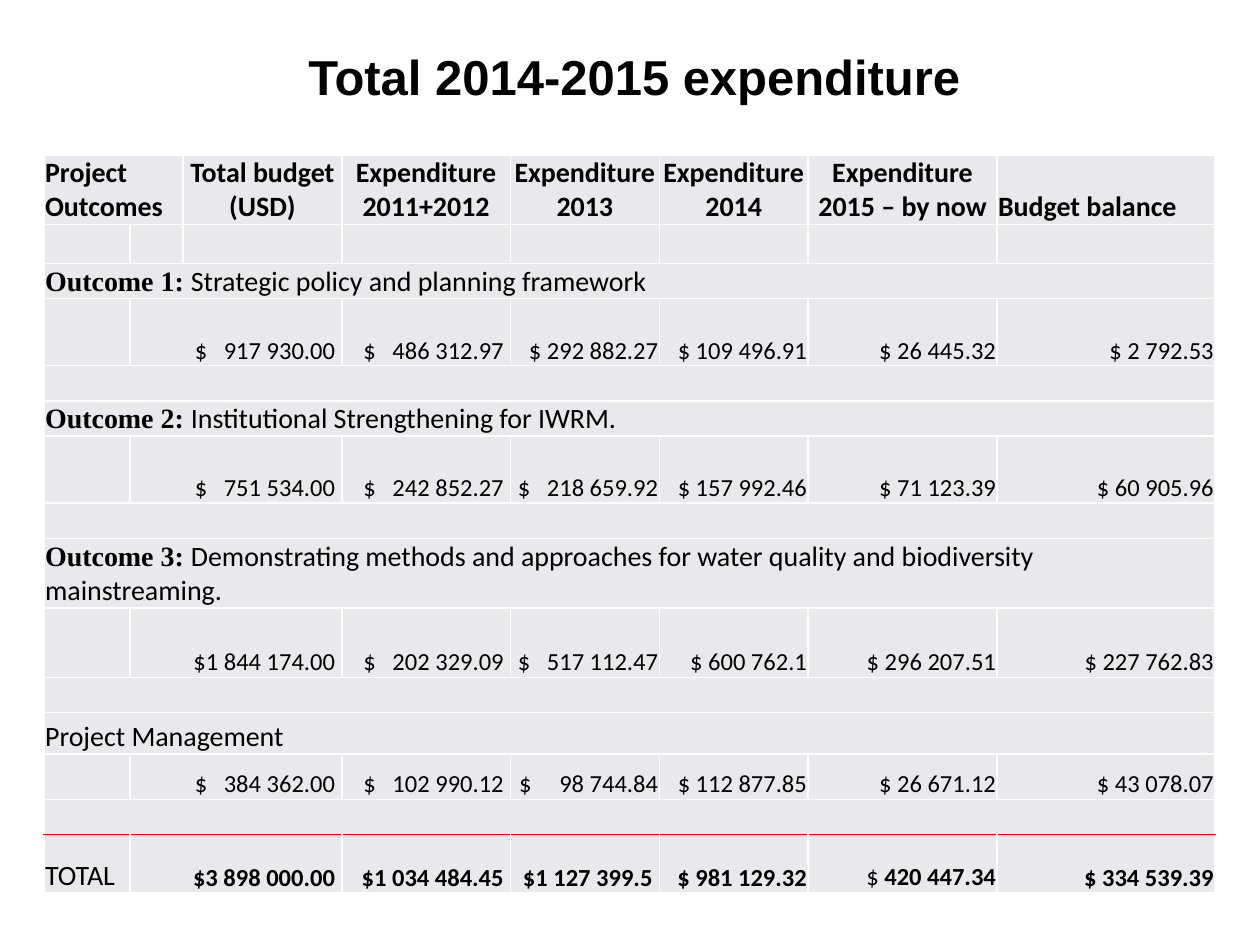
"""Builds a slide with a table of project expenditure by outcome."""
from lxml import etree
from pptx import Presentation
from pptx.dml.color import RGBColor
from pptx.enum.text import MSO_ANCHOR, PP_ALIGN
from pptx.oxml.ns import qn
from pptx.util import Cm, Pt

LEFT, CENTER, RIGHT = PP_ALIGN.LEFT, PP_ALIGN.CENTER, PP_ALIGN.RIGHT
MIDDLE, BOTTOM = MSO_ANCHOR.MIDDLE, MSO_ANCHOR.BOTTOM
BLACK, WHITE, RED, GREY = "000000", "FFFFFF", "FF0000", "E9E9ED"
BODY, SERIF, HEADING = "Calibri", "Times New Roman", "Arial"

COLUMN_WIDTHS = [1.73, 1.07, 3.2, 3.4, 3, 3, 3.81, 4.39]
ROW_HEIGHTS = [1.4, 0.79, 0.71, 1.35, 0.71, 0.71, 1.35, 0.71,
               1.37, 1.4, 0.71, 0.84, 0.91, 0.71, 1.17]
HEADERS = ["Total budget (USD)", "Expenditure 2011+2012", "Expenditure 2013",
           "Expenditure 2014", "Expenditure 2015 – by now", "Budget balance"]
SECTIONS = [
    ("Outcome 1: ", "Strategic policy and planning framework",
     [" $   917 930.00 ", " $   486 312.97 ", "$ 292 882.27",
      "$ 109 496.91", "$ 26 445.32", "$ 2 792.53"]),
    ("Outcome 2: ", "Institutional Strengthening for IWRM.",
     [" $   751 534.00 ", " $   242 852.27 ", " $   218 659.92 ",
      "$ 157 992.46", "$ 71 123.39", "$ 60 905.96"]),
    ("Outcome 3: ", "Demonstrating methods and approaches for water quality "
     "and biodiversity mainstreaming.",
     [" $1 844 174.00 ", " $   202 329.09 ", " $   517 112.47 ",
      "$ 600 762.1", " $ 296 207.51", "$ 227 762.83"]),
    ("", "Project Management",
     [" $   384 362.00 ", " $   102 990.12 ", " $     98 744.84 ",
      "$ 112 877.85", "$ 26 671.12", "$ 43 078.07"]),
]
TOTALS = [" $3 898 000.00 ", " $1 034 484.45 ", " $1 127 399.5 ",
          "$ 981 129.32", "420 447.34", "$ 334 539.39"]


def color(value):
    return RGBColor.from_string(value)


def write(paragraph, alignment, text, size, bold=False, font=BODY):
    paragraph.alignment = alignment
    run = paragraph.add_run()
    run.text = text
    run.font.name = font
    run.font.size = Pt(size)
    run.font.bold = bold
    run.font.color.rgb = color(BLACK)


presentation = Presentation()
presentation.slide_width = Cm(25.4)
presentation.slide_height = Cm(19.05)
slide = presentation.slides.add_slide(presentation.slide_layouts[5])

title = slide.shapes.title
title.left, title.top = Cm(3.07), Cm(0.71)
title.width, title.height = Cm(19.43), Cm(1.63)
title.text_frame.vertical_anchor = MIDDLE
write(title.text_frame.paragraphs[0], CENTER,
      "Total 2014-2015 expenditure", 28, True, HEADING)

last_row = len(ROW_HEIGHTS) - 1
last_column = len(COLUMN_WIDTHS) - 1
table = slide.shapes.add_table(
    len(ROW_HEIGHTS), len(COLUMN_WIDTHS), Cm(0.89), Cm(3.12),
    Cm(sum(COLUMN_WIDTHS)), Cm(sum(ROW_HEIGHTS))).table
table.first_row = False
table.horz_banding = False
for column, width in zip(table.columns, COLUMN_WIDTHS):
    column.width = Cm(width)

for row_index, height in enumerate(ROW_HEIGHTS):
    table.rows[row_index].height = Cm(height)
    for cell in table.rows[row_index].cells:
        cell.margin_left = cell.margin_right = cell.margin_top = Cm(0.02)
        cell.margin_bottom = 0
        cell.vertical_anchor = BOTTOM
        properties = cell._tc.get_or_add_tcPr()
        for side in ("L", "R", "T", "B"):
            on_total_line = (row_index, side) in ((last_row - 1, "B"), (last_row, "T"))
            line = etree.SubElement(properties, qn(f"a:ln{side}"), w=str(Pt(1)))
            line_fill = etree.SubElement(line, qn("a:solidFill"))
            etree.SubElement(line_fill, qn("a:srgbClr"), val=RED if on_total_line else WHITE)
        cell.fill.solid()
        cell.fill.fore_color.rgb = color(GREY)
        end = etree.SubElement(cell.text_frame.paragraphs[0]._p, qn("a:endParaRPr"))
        end.set("sz", "1400")

table.cell(0, 0).merge(table.cell(0, 1))
write(table.cell(0, 0).text_frame.paragraphs[0], LEFT, "Project Outcomes", 16, True)
for column_index, header in enumerate(HEADERS, 2):
    alignment = LEFT if column_index == last_column else CENTER
    write(table.cell(0, column_index).text_frame.paragraphs[0], alignment, header, 16, True)

amount_rows = []
for section_index, (label, description, amounts) in enumerate(SECTIONS):
    heading_row = 2 + 3 * section_index
    for row_index in (heading_row, heading_row + 2):
        table.cell(row_index, 0).merge(table.cell(row_index, last_column))
    paragraph = table.cell(heading_row, 0).text_frame.paragraphs[0]
    if label:
        write(paragraph, LEFT, label, 16, True, SERIF)
    write(paragraph, LEFT, description, 16)
    amount_rows.append((heading_row + 1, amounts))
amount_rows.append((last_row, TOTALS))

write(table.cell(last_row, 0).text_frame.paragraphs[0], LEFT, "TOTAL", 16)
current_total = table.cell(last_row, 6).text_frame.paragraphs[0]
write(current_total, RIGHT, " ", 18, font=HEADING)
write(current_total, RIGHT, "$ ", 14)
for row_index, amounts in amount_rows:
    table.cell(row_index, 1).merge(table.cell(row_index, 2))
    for column_index, amount in zip([1, 3, 4, 5, 6, 7], amounts):
        write(table.cell(row_index, column_index).text_frame.paragraphs[0],
              RIGHT, amount, 14, row_index == last_row)

presentation.save("out.pptx")
